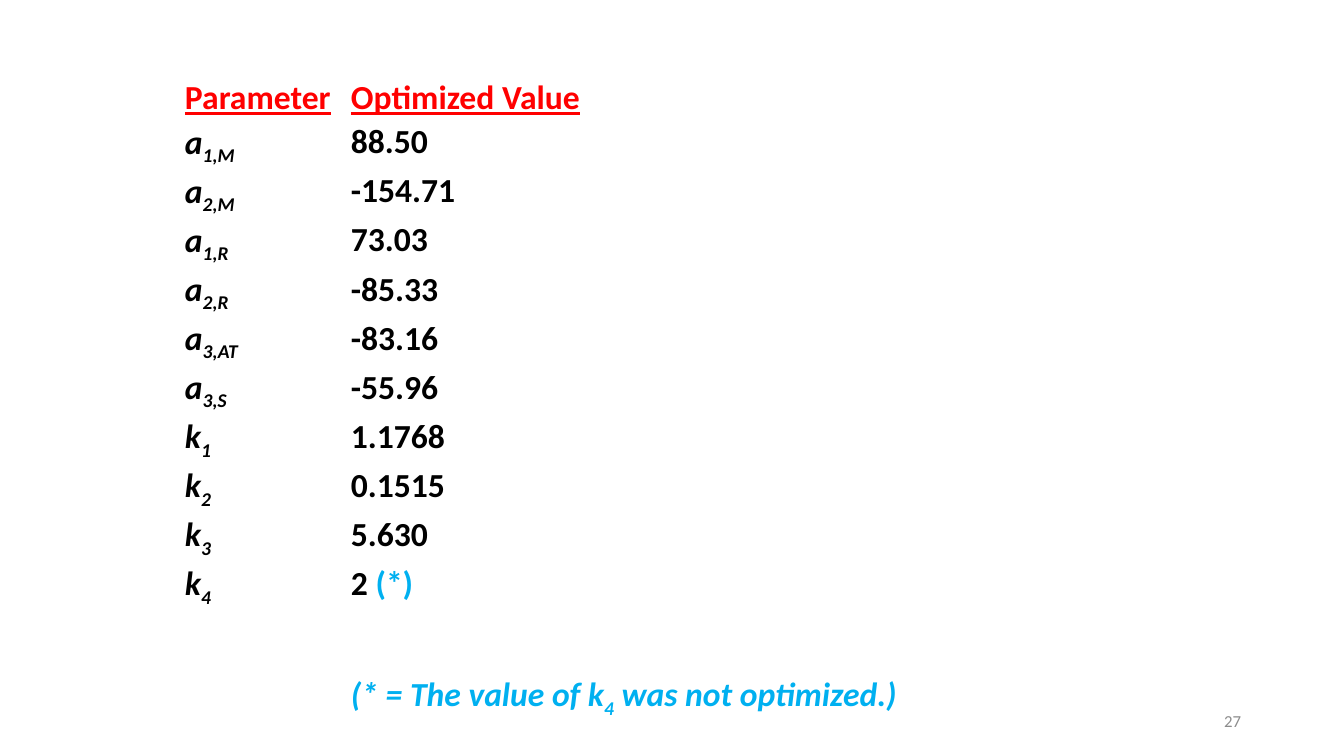
from pptx import Presentation
from pptx.dml.color import RGBColor
from pptx.enum.text import MSO_ANCHOR, PP_ALIGN
from pptx.util import Pt

SCALE = 914400 / 100.8
RED = RGBColor(0xFF, 0x00, 0x00)
BLACK = RGBColor(0x00, 0x00, 0x00)
BLUE = RGBColor(0x00, 0xB0, 0xF0)
GRAY = RGBColor(0x8C, 0x8C, 0x8C)

BASE = {"name": "Calibri", "size": Pt(24), "bold": True}
HEAD = BASE | {"underline": True}
SLANT = BASE | {"italic": True}
SMALL = {"name": "Calibri", "size": Pt(12)}

ROWS = [
    ("a", "1,M", "88.50"),
    ("a", "2,M", "-154.71"),
    ("a", "1,R", "73.03"),
    ("a", "2,R", "-85.33"),
    ("a", "3,AT", "-83.16"),
    ("a", "3,S", "-55.96"),
    ("k", "1", "1.1768"),
    ("k", "2", "0.1515"),
    ("k", "3", "5.630"),
    ("k", "4", "2"),
]


def px(count):
    """Turn pixels into EMU."""
    return round(count * SCALE)


def add_run(para, text, style, color, sub=False):
    """Add one styled run, lowered if it is a subscript."""
    run = para.add_run()
    run.text = text
    for key, value in style.items():
        setattr(run.font, key, value)
    run.font.color.rgb = color
    if sub:
        run._r.get_or_add_rPr().set("baseline", "-25000")


def set_cell(cell):
    """Clear the fill, set the margins and return the first paragraph."""
    cell.fill.background()
    form = {"margin_left": px(7), "margin_right": px(7),
            "margin_top": 0, "margin_bottom": 0}
    for key, value in form.items():
        setattr(cell, key, value)
    return space(cell.text_frame.paragraphs[0])


def space(para):
    """Give a table paragraph its line spacing."""
    para.line_spacing = 1.07
    para.space_after = Pt(8)
    return para


def add_values(slide, left, top, width, row_height):
    """Draw the table of parameters with its closing note."""
    count = len(ROWS) + 1
    table = slide.shapes.add_table(count, 2, px(left), px(top), px(width),
                                   px(row_height * count)).table
    table.first_row = table.horz_banding = False
    first = 166
    for column, size in zip(table.columns, (first, width - first)):
        column.width = px(size)
    for row in table.rows:
        row.height = px(row_height)

    for col, title in enumerate(("Parameter", "Optimized Value")):
        add_run(set_cell(table.cell(0, col)), title, HEAD, RED)
    for row, (name, index, value) in enumerate(ROWS, 1):
        para = set_cell(table.cell(row, 0))
        add_run(para, name, SLANT, BLACK)
        add_run(para, index, SLANT, BLACK, sub=True)
        para = set_cell(table.cell(row, 1))
        add_run(para, value, BASE, BLACK)

    add_run(para, " (*)", BASE, BLUE)
    note = space(table.cell(len(ROWS), 1).text_frame.add_paragraph())
    note.space_before = Pt(40)
    add_run(note, "(* = The value of k", SLANT, BLUE)
    add_run(note, "4", SLANT, BLUE, sub=True)
    add_run(note, " was not optimized.)", SLANT, BLUE)


def add_number(slide, left, top, width, height):
    """Place the slide number at the right of its box."""
    box = slide.shapes.add_textbox(px(left), px(top), px(width), px(height))
    frame = box.text_frame
    frame.word_wrap = True
    frame.vertical_anchor = MSO_ANCHOR.MIDDLE
    para = frame.paragraphs[0]
    para.alignment = PP_ALIGN.RIGHT
    add_run(para, "27", SMALL, GRAY)


def main():
    """Build the slide and save it."""
    deck = Presentation()
    deck.slide_width, deck.slide_height = px(1344), px(756)
    slide = deck.slides.add_slide(deck.slide_layouts[6])
    add_number(slide, 949, 701, 302, 40)
    add_values(slide, 178, 75, 1003, 44)
    deck.save("out.pptx")


if __name__ == "__main__":
    main()
